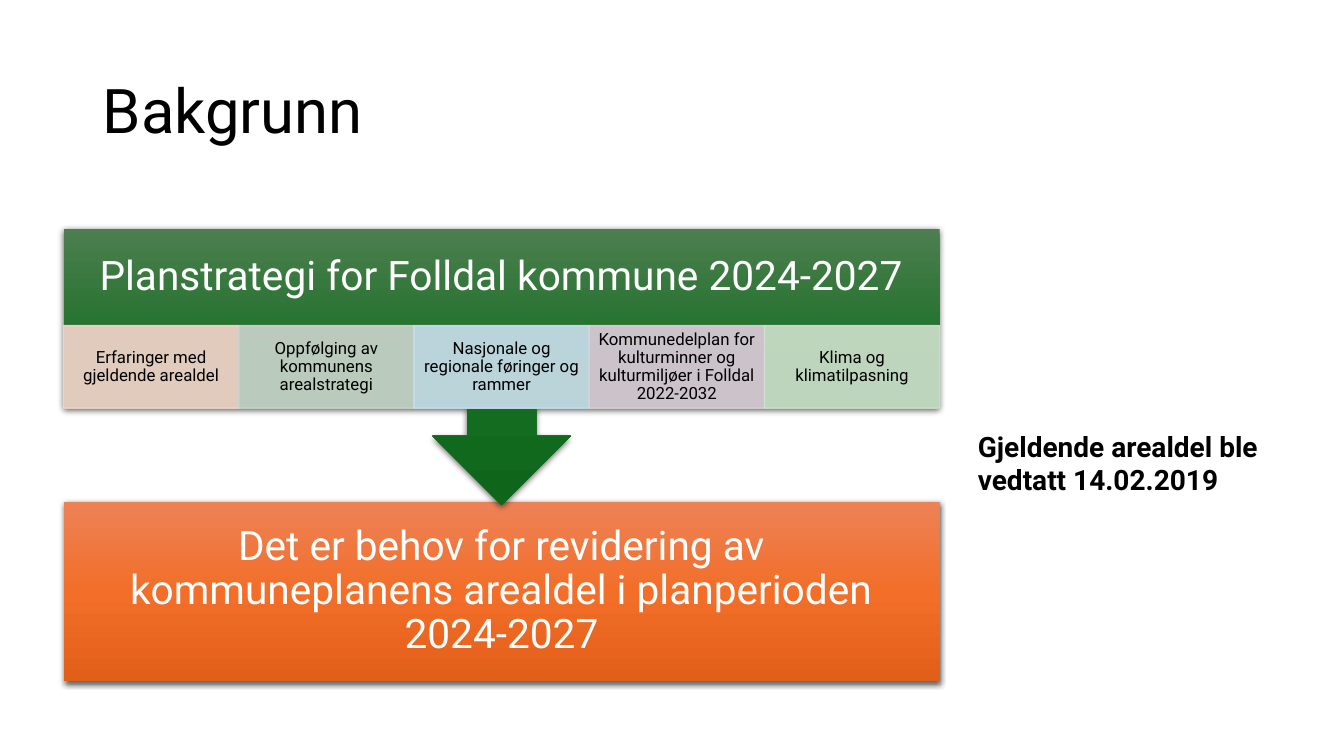
from dataclasses import dataclass

from lxml.etree import SubElement
from pptx import Presentation
from pptx.dml.color import RGBColor
from pptx.enum.shapes import MSO_SHAPE
from pptx.enum.text import MSO_ANCHOR, MSO_AUTO_SIZE, PP_ALIGN
from pptx.oxml.ns import qn
from pptx.util import Inches, Pt

FONT = "Roboto"
SLIDE_WIDTH, SLIDE_HEIGHT = Inches(13.33), Inches(7.5)
COLORS = {
    "black": "000000",
    "white": "FFFFFF",
    "orange light": "ED8257",
    "orange": "F26E29",
    "orange dark": "E25F1A",
    "green light": "4D7E50",
    "green": "156F21",
    "green dark": "0F661B",
    "rose": "F7D5CE",
    "sage": "CCD4CD",
    "sky": "CCDFEF",
    "mauve": "DFCDDC",
    "mint": "D0E1CD",
}


@dataclass
class Area:
    """A rectangle in percent of the slide's width and height."""
    left: float
    top: float
    width: float
    height: float

    def lengths(self) -> tuple[int, int, int, int]:
        return (
            int(SLIDE_WIDTH * self.left / 100),
            int(SLIDE_HEIGHT * self.top / 100),
            int(SLIDE_WIDTH * self.width / 100),
            int(SLIDE_HEIGHT * self.height / 100),
        )


@dataclass
class Panel:
    text: str
    area: Area
    preset: MSO_SHAPE
    hue: str
    bottom_inset: float


@dataclass
class Tile:
    text: str
    color: str


TITLE_AREA = Area(6.9, 5.33, 86.27, 19.33)
NOTE_AREA = Area(72.02, 56.13, 25.66, 14.4)
TILE_ROW = Area(4.73, 43.07, 65.19, 10.93)
PANEL_INSET = 0.23
TILE_HEIGHT = 0.82

PANELS = [
    Panel("Det er behov for revidering av kommuneplanens arealdel i planperioden 2024-2027",
          Area(4.73, 66.4, 65.19, 23.73), MSO_SHAPE.RECTANGLE, "orange", PANEL_INSET),
    Panel("Planstrategi for Folldal kommune 2024-2027",
          Area(4.73, 30.27, 65.19, 36.53), MSO_SHAPE.DOWN_ARROW_CALLOUT, "green",
          PANEL_INSET + TILE_HEIGHT),
]
TILES = [
    Tile("Erfaringer med gjeldende arealdel", "rose"),
    Tile("Oppfølging av kommunens arealstrategi", "sage"),
    Tile("Nasjonale og regionale føringer og rammer", "sky"),
    Tile("Kommunedelplan for kulturminner og kulturmiljøer i Folldal 2022-2032", "mauve"),
    Tile("Klima og klimatilpasning", "mint"),
]


def rgb(name: str) -> RGBColor:
    return RGBColor.from_string(COLORS[name])


def place(shape, area: Area) -> None:
    shape.left, shape.top, shape.width, shape.height = area.lengths()


def write(shape, text: str, size: float, color: str, align=PP_ALIGN.LEFT,
          spacing: float = 0.9, bold: bool = False, anchor=MSO_ANCHOR.MIDDLE) -> None:
    frame = shape.text_frame
    frame.word_wrap = True
    frame.vertical_anchor = anchor
    para = frame.paragraphs[0]
    para.text = text
    para.alignment = align
    para.line_spacing = spacing
    font = para.font
    font.name, font.size, font.bold = FONT, Pt(size), bold
    font.color.rgb = rgb(color)


def set_insets(shape, side: float, top: float, bottom: float) -> None:
    frame = shape.text_frame
    frame.margin_left = frame.margin_right = Inches(side)
    frame.margin_top, frame.margin_bottom = Inches(top), Inches(bottom)


def add_alpha(color_element, percent: int) -> None:
    SubElement(color_element, qn("a:alpha"), val=str(percent * 1000))


def fill_gradient(shape, names: list[str]) -> None:
    shape.fill.gradient()
    shape.fill.gradient_angle = 270
    stops = shape._element.spPr.find(".//" + qn("a:gsLst"))
    for stop in list(stops):
        stops.remove(stop)
    for index, name in enumerate(names):
        position = 100000 * index // (len(names) - 1)
        stop = SubElement(stops, qn("a:gs"), pos=str(position))
        SubElement(stop, qn("a:srgbClr"), val=COLORS[name])


def add_shadow(shape) -> None:
    shape.shadow.inherit = False
    effects = shape._element.spPr.find(qn("a:effectLst"))
    shadow = SubElement(effects, qn("a:outerShdw"), blurRad=str(Pt(4.5)),
                        dist=str(Pt(1.5)), dir="5400000", algn="ctr", rotWithShape="0")
    add_alpha(SubElement(shadow, qn("a:srgbClr"), val=COLORS["black"]), 63)


def draw_panel(page, panel: Panel) -> None:
    shape = page.shapes.add_shape(panel.preset, *panel.area.lengths())
    fill_gradient(shape, [f"{panel.hue} light", panel.hue, f"{panel.hue} dark"])
    shape.line.fill.background()
    add_shadow(shape)
    set_insets(shape, PANEL_INSET, PANEL_INSET, panel.bottom_inset)
    write(shape, panel.text, 29, "white", PP_ALIGN.CENTER)


def draw_tile(page, tile: Tile, column: int) -> None:
    width = TILE_ROW.width / len(TILES)
    area = Area(TILE_ROW.left + column * width, TILE_ROW.top, width, TILE_ROW.height)
    shape = page.shapes.add_shape(MSO_SHAPE.RECTANGLE, *area.lengths())
    shape.shadow.inherit = False
    shape.line.width = Pt(1)
    for fill in (shape.fill, shape.line.fill):
        fill.solid()
        fill.fore_color.rgb = rgb(tile.color)
    for color_element in shape._element.spPr.iter(qn("a:srgbClr")):
        add_alpha(color_element, 90)
    set_insets(shape, 0.09, 0.02, 0.02)
    write(shape, tile.text, 12, "black", PP_ALIGN.CENTER)


def main() -> None:
    deck = Presentation()
    deck.slide_width, deck.slide_height = SLIDE_WIDTH, SLIDE_HEIGHT
    page = deck.slides.add_slide(deck.slide_layouts.get_by_name("Title Only"))

    # Title
    title = page.shapes.title
    place(title, TITLE_AREA)
    write(title, "Bakgrunn", 44, "black")
    title.text_frame.auto_size = MSO_AUTO_SIZE.NONE

    # Conclusion, and the plan strategy that points to it
    for panel in PANELS:
        draw_panel(page, panel)

    # Topics of the plan strategy
    for column, tile in enumerate(TILES):
        draw_tile(page, tile, column)

    # Side note
    note = page.shapes.add_textbox(*NOTE_AREA.lengths())
    write(note, "Gjeldende arealdel ble vedtatt 14.02.2019", 20, "black",
          spacing=1.0, bold=True, anchor=MSO_ANCHOR.TOP)

    deck.save("out.pptx")


if __name__ == "__main__":
    main()
